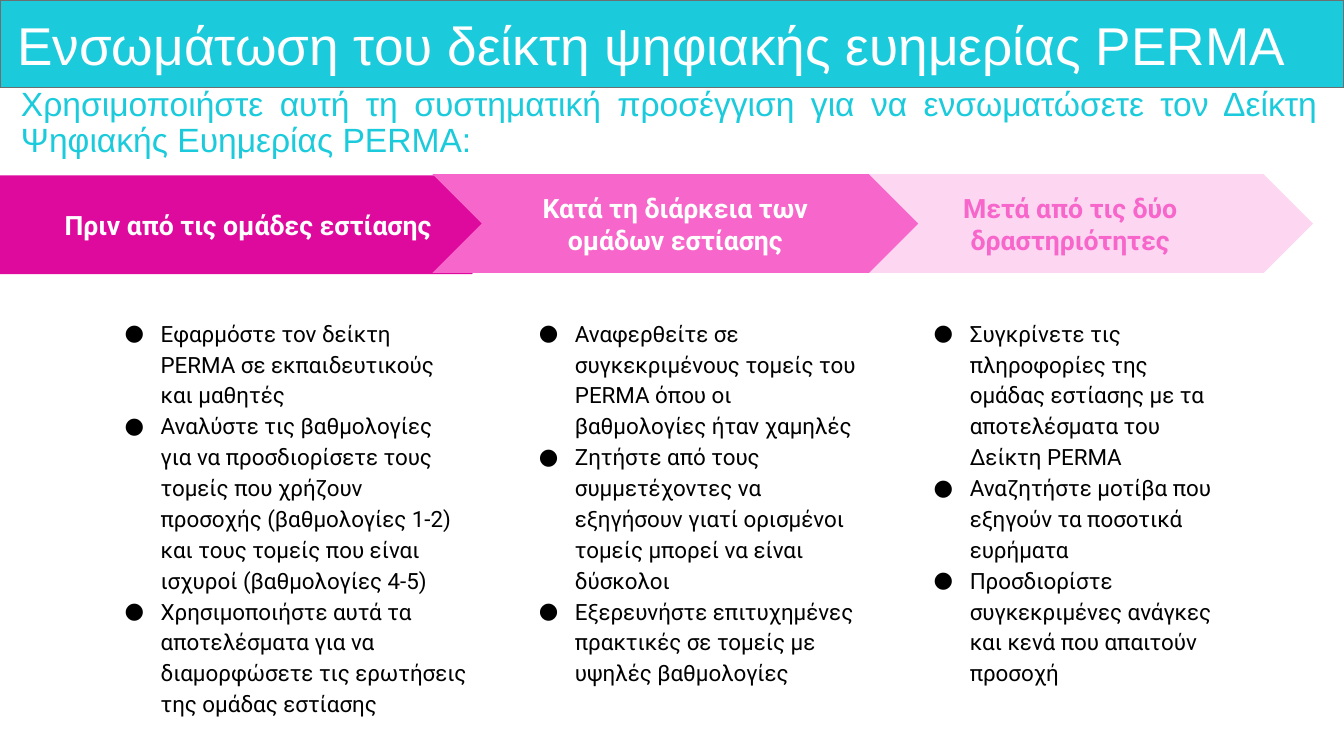
import pptx
import pptx.dml.color
import pptx.enum.shapes
import pptx.enum.text
import pptx.oxml.ns
import pptx.util
from lxml import etree
from pptx.util import Cm

COLOURS = {
    "turquoise": "1BCBDC",
    "grey": "6C6E70",
    "magenta": "DE0A9D",
    "pink": "F766CA",
    "pale": "FDD6F1",
    "white": "FFFFFF",
    "black": "000000",
}
ALIGN = pptx.enum.text.PP_ALIGN
ANCHOR = pptx.enum.text.MSO_ANCHOR
SHAPE = pptx.enum.shapes.MSO_SHAPE

PHASES = [
    {
        "heading": "Μετά από τις δύο δραστηριότητες",
        "arrow": (SHAPE.CHEVRON, 20.85, 4.39, 12.24, 2.49),
        "colours": ("pale", "pink"),
        "list_left": 22.83,
        "list_width": 8.28,
        "steps": [
            "Συγκρίνετε τις πληροφορίες της ομάδας εστίασης με τα αποτελέσματα του Δείκτη PERMA",
            "Αναζητήστε μοτίβα που εξηγούν τα ποσοτικά ευρήματα",
            "Προσδιορίστε συγκεκριμένες ανάγκες και κενά που απαιτούν προσοχή",
        ],
    },
    {
        "heading": "Πριν από τις ομάδες εστίασης",
        "arrow": (SHAPE.PENTAGON, 0, 4.42, 13.13, 2.49),
        "colours": ("magenta", "white"),
        "list_left": 2.44,
        "list_width": 9.68,
        "steps": [
            "Εφαρμόστε τον δείκτη PERMA σε εκπαιδευτικούς και μαθητές",
            "Αναλύστε τις βαθμολογίες για να προσδιορίσετε τους τομείς που χρήζουν προσοχής "
            "(βαθμολογίες 1-2) και τους τομείς που είναι ισχυροί (βαθμολογίες 4-5)",
            "Χρησιμοποιήστε αυτά τα αποτελέσματα για να διαμορφώσετε τις ερωτήσεις "
            "της ομάδας εστίασης",
        ],
    },
    {
        "heading": "Κατά τη διάρκεια των ομάδων εστίασης",
        "arrow": (SHAPE.CHEVRON, 10.9, 4.39, 12.24, 2.49),
        "colours": ("pink", "white"),
        "list_left": 12.88,
        "list_width": 9.04,
        "steps": [
            "Αναφερθείτε σε συγκεκριμένους τομείς του PERMA όπου οι βαθμολογίες ήταν χαμηλές",
            "Ζητήστε από τους συμμετέχοντες να εξηγήσουν γιατί ορισμένοι τομείς "
            "μπορεί να είναι δύσκολοι",
            "Εξερευνήστε επιτυχημένες πρακτικές σε τομείς με υψηλές βαθμολογίες",
        ],
    },
]


def colour(name):
    """Return the named colour as an RGB value."""
    return pptx.dml.color.RGBColor.from_string(COLOURS[name])


def add_bullet(paragraph):
    """Give a paragraph a hanging black bullet."""
    properties = paragraph._p.get_or_add_pPr()
    properties.set("marL", str(Cm(1.27)))
    properties.set("indent", str(-Cm(0.91)))
    qualified = pptx.oxml.ns.qn
    bullet_colour = etree.SubElement(properties, qualified("a:buClr"))
    etree.SubElement(bullet_colour, qualified("a:srgbClr"), val=COLOURS["black"])
    etree.SubElement(properties, qualified("a:buFont"), typeface="Roboto")
    etree.SubElement(properties, qualified("a:buChar"), char="●")


def write_text(shape, texts, size, color, font="Roboto", bold=False, align=ALIGN.LEFT,
               anchor=ANCHOR.MIDDLE, spacing=1.0, insets=(0.34, 0.34), bullets=False):
    """Write one formatted paragraph per text into a shape."""
    frame = shape.text_frame
    frame.word_wrap = True
    frame.vertical_anchor = anchor
    frame.margin_left = frame.margin_right = Cm(insets[0])
    frame.margin_top = frame.margin_bottom = Cm(insets[1])
    for index, text in enumerate(texts):
        paragraph = frame.add_paragraph() if index else frame.paragraphs[0]
        if bullets:
            add_bullet(paragraph)
        paragraph.alignment = align
        paragraph.line_spacing = spacing
        run = paragraph.add_run()
        run.text = text
        run.font.size = pptx.util.Pt(size)
        run.font.name = font
        run.font.bold = bold
        run.font.color.rgb = colour(color)


def add_box(slide, left, top, width, height):
    """Add an empty text box measured in centimetres."""
    return slide.shapes.add_textbox(Cm(left), Cm(top), Cm(width), Cm(height))


def add_filled_shape(slide, kind, left, top, width, height, fill, line=None):
    """Add a flat filled shape, outlined only when a line colour is named."""
    shape = slide.shapes.add_shape(kind, Cm(left), Cm(top), Cm(width), Cm(height))
    shape.shadow.inherit = False
    shape.fill.solid()
    shape.fill.fore_color.rgb = colour(fill)
    if line:
        shape.line.color.rgb = colour(line)
        shape.line.width = pptx.util.Pt(1)
    else:
        shape.line.fill.background()
    return shape


def add_phase(slide, phase):
    """Add the arrow of a phase and the list of steps below it."""
    fill, text_colour = phase["colours"]
    arrow = add_filled_shape(slide, *phase["arrow"], fill)
    write_text(arrow, [phase["heading"]], 19, text_colour, bold=True, align=ALIGN.CENTER)
    steps = add_box(slide, phase["list_left"], 7.62, phase["list_width"], 9.68)
    write_text(steps, phase["steps"], 16, "black", anchor=ANCHOR.TOP, spacing=1.15,
               bullets=True)


def main():
    """Build the slide and save it."""
    presentation = pptx.Presentation()
    presentation.slide_width = Cm(33.87)
    presentation.slide_height = Cm(19.05)
    slide = presentation.slides.add_slide(presentation.slide_layouts[6])

    add_filled_shape(slide, SHAPE.RECTANGLE, 0, 0, 33.87, 2.21, "turquoise", line="grey")
    title = add_box(slide, 0.28, 0.23, 33.17, 1.98)
    write_text(title, ["Ενσωμάτωση του δείκτη ψηφιακής ευημερίας PERMA"], 38, "white",
               font="Arial", spacing=0.9, insets=(0.15, 0.15))
    introduction = add_box(slide, 0.28, 2.36, 33.17, 1.52)
    write_text(introduction,
               ["Χρησιμοποιήστε αυτή τη συστηματική προσέγγιση για να ενσωματώσετε "
                "τον Δείκτη Ψηφιακής Ευημερίας PERMA:"],
               24, "turquoise", font="Arial", align=ALIGN.JUSTIFY, spacing=0.9,
               insets=(0.25, 0.13))
    for phase in PHASES:
        add_phase(slide, phase)

    presentation.save("out.pptx")


if __name__ == "__main__":
    main()
